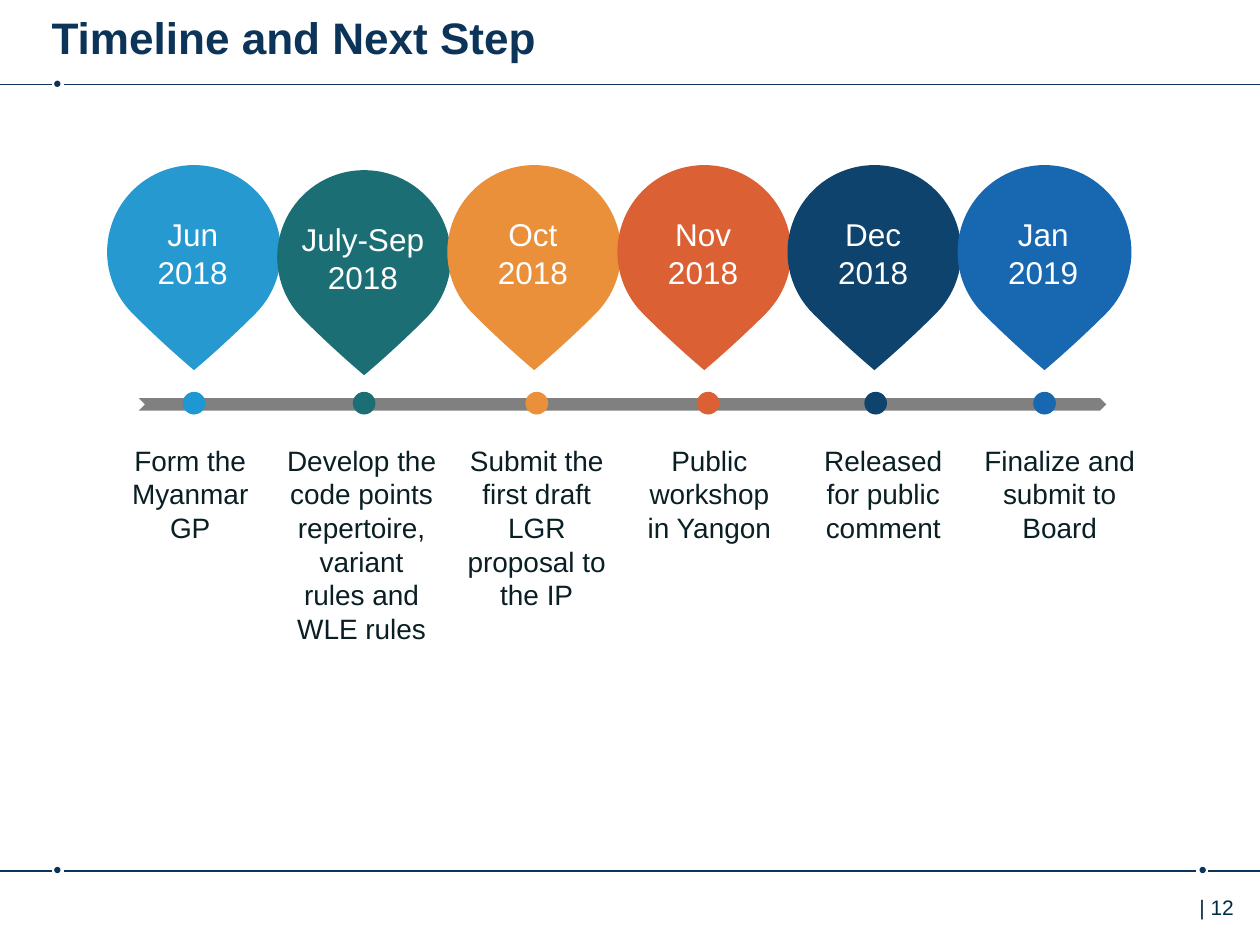
from lxml.etree import SubElement
from pptx import Presentation
from pptx.dml.color import RGBColor
from pptx.enum.shapes import MSO_CONNECTOR, MSO_SHAPE
from pptx.enum.text import MSO_ANCHOR, PP_ALIGN
from pptx.oxml.ns import qn
from pptx.util import Inches, Pt

NAVY = RGBColor(0x0C, 0x34, 0x58)
PAGE_INK = RGBColor(0x00, 0x2B, 0x49)
INK = RGBColor(0x0A, 0x1F, 0x24)
WHITE = RGBColor(0xFF, 0xFF, 0xFF)
GREY = RGBColor(0x80, 0x80, 0x80)
SKY = RGBColor(0x25, 0x99, 0xD0)
BRIGHT_SKY = RGBColor(0x1D, 0x98, 0xD3)
TEAL = RGBColor(0x1B, 0x6F, 0x74)
AMBER = RGBColor(0xEA, 0x90, 0x3A)
RUST = RGBColor(0xDB, 0x60, 0x33)
DEEP_BLUE = RGBColor(0x0D, 0x43, 0x6C)
BLUE = RGBColor(0x17, 0x68, 0xB1)

PIN_SIZE, PIN_STEP, DOT_SIZE = 1.38, 1.35, 0.18

# month, year, pin top, pin colour, dot colour, dot left, caption, caption left, width, height
MILESTONES = [
    ("Jun", "2018", 1.31, SKY, BRIGHT_SKY, 1.45,
     "Form the Myanmar GP", 0.83, 1.36, 0.91),
    ("July-Sep", "2018", 1.35, TEAL, TEAL, 2.8,
     "Develop the code points repertoire, variant rules and WLE rules", 2.18, 1.38, 1.99),
    ("Oct", "2018", 1.31, AMBER, AMBER, 4.17,
     "Submit the first draft LGR proposal to the IP", 3.61, 1.3, 1.45),
    ("Nov", "2018", 1.31, RUST, RUST, 5.53,
     "Public workshop in Yangon", 4.98, 1.3, 0.91),
    ("Dec", "2018", 1.31, DEEP_BLUE, DEEP_BLUE, 6.86,
     "Released for public comment", 6.36, 1.3, 0.91),
    ("Jan", "2019", 1.31, BLUE, BLUE, 8.2,
     "Finalize and submit to Board", 7.65, 1.52, 0.91),
]


def add_filled(slide, preset, box, color):
    shape = slide.shapes.add_shape(preset, *map(Inches, box))
    shape.shadow.inherit = False
    shape.fill.solid()
    shape.fill.fore_color.rgb = color
    shape.line.fill.background()
    return shape


def write(frame, lines, size, color, align=PP_ALIGN.CENTER, bold=False):
    frame.word_wrap = True
    for index, line in enumerate(lines):
        paragraph = frame.paragraphs[0] if index == 0 else frame.add_paragraph()
        paragraph.text = line
        paragraph.alignment = align
        font = paragraph.runs[0].font
        for name, value in {"name": "Arial", "size": Pt(size), "bold": bold}.items():
            setattr(font, name, value)
        font.color.rgb = color


def add_text(slide, box, lines, size, color, align=PP_ALIGN.CENTER):
    frame = slide.shapes.add_textbox(*map(Inches, box)).text_frame
    write(frame, lines, size, color, align)


def add_rule(slide, y, segments, dots):
    for dot_left in dots:
        add_filled(slide, MSO_SHAPE.OVAL, (dot_left, y - 0.03, 0.05, 0.05), NAVY)
    for start, end in segments:
        rule = slide.shapes.add_connector(
            MSO_CONNECTOR.STRAIGHT, Inches(start), Inches(y), Inches(end), Inches(y))
        rule.line.color.rgb = NAVY
        rule.line.width = Pt(1)
        SubElement(rule._element.spPr, qn("a:effectLst"))


def add_title(slide, box, wording):
    title = slide.shapes.title
    title.left, title.top, title.width, title.height = map(Inches, box)
    frame = title.text_frame
    margins = {"margin_left": 0, "margin_right": 0,
               "margin_top": Inches(0.05), "margin_bottom": Inches(0.05),
               "vertical_anchor": MSO_ANCHOR.MIDDLE}
    for name, value in margins.items():
        setattr(frame, name, value)
    write(frame, [wording], 25.2, NAVY, PP_ALIGN.LEFT, True)


def add_pin(slide, box, color, lines):
    left, top, width, height = box
    pin = add_filled(slide, MSO_SHAPE.TEAR, box, color)
    pin.rotation = 135
    pin.adjustments[0] = 0.961
    add_text(slide, (left + 0.03, top + 0.35, width - 0.08, 0.71), lines, 18, WHITE)


def add_timeline(slide, box):
    left, top, width, height = box
    add_filled(slide, MSO_SHAPE.CHEVRON, (left + 0.25, top + 1.85, width - 0.45, 0.1), GREY)
    for index, milestone in enumerate(MILESTONES):
        (month, year, pin_top, pin_color, dot_color, dot_left,
         caption, caption_left, caption_width, caption_height) = milestone
        add_filled(slide, MSO_SHAPE.OVAL,
                   (dot_left, top + 1.8, DOT_SIZE, DOT_SIZE), dot_color)
        add_pin(slide, (left + index * PIN_STEP, pin_top, PIN_SIZE, PIN_SIZE),
                pin_color, [month, year])
        add_text(slide, (caption_left, top + 2.16, caption_width, caption_height),
                 [caption], 16, INK)


def main():
    deck = Presentation()
    deck.slide_width, deck.slide_height = Inches(10), Inches(7.5)
    slide = deck.slides.add_slide(deck.slide_layouts[5])
    add_rule(slide, 0.67, [(0.41, 0), (10, 0.51)], [0.43])
    add_rule(slide, 6.91, [(0.41, 0), (9.49, 0.51), (9.59, 10)], [0.43, 9.52])
    add_text(slide, (9.42, 7.05, 0.58, 0.4), ["| 12"], 12, PAGE_INK, PP_ALIGN.LEFT)
    add_title(slide, (0.41, 0.05, 8.76, 0.49), "Timeline and Next Step")
    add_timeline(slide, (0.85, 1.31, 8.13, 4.15))
    deck.save("out.pptx")


if __name__ == "__main__":
    main()
